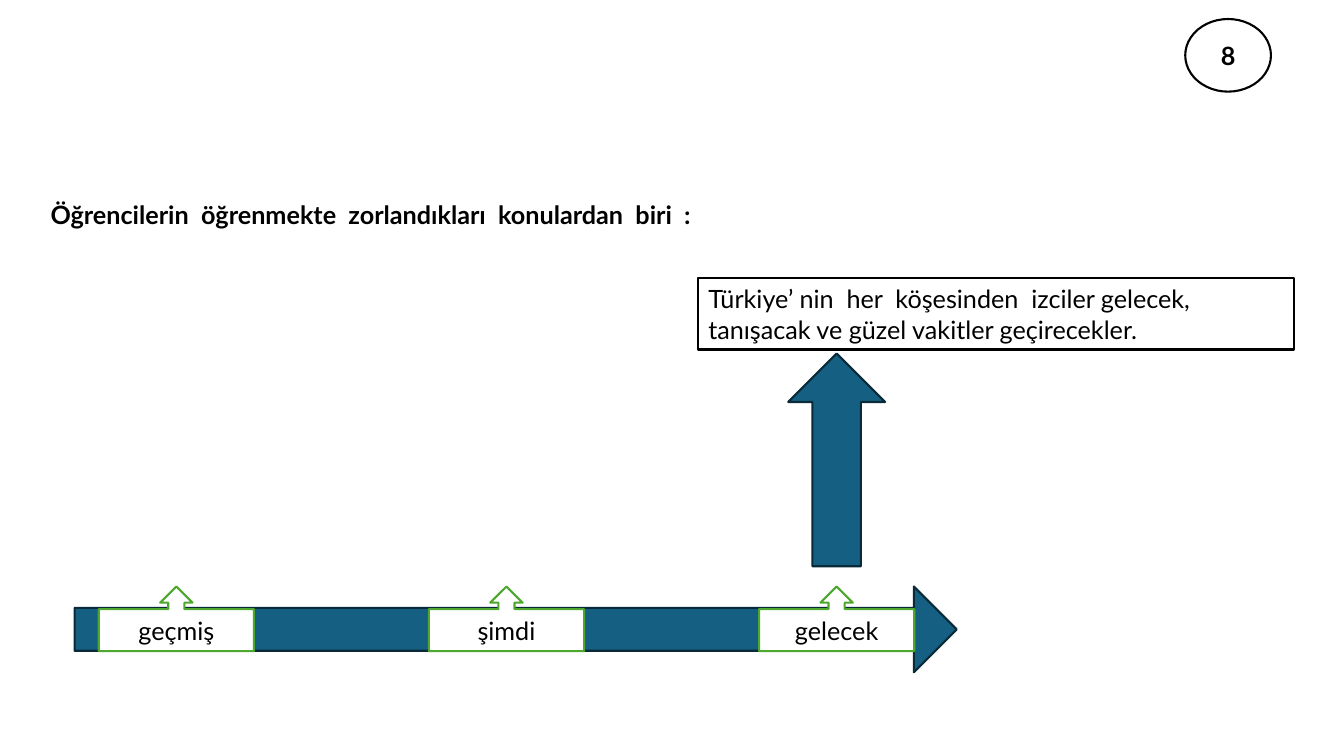
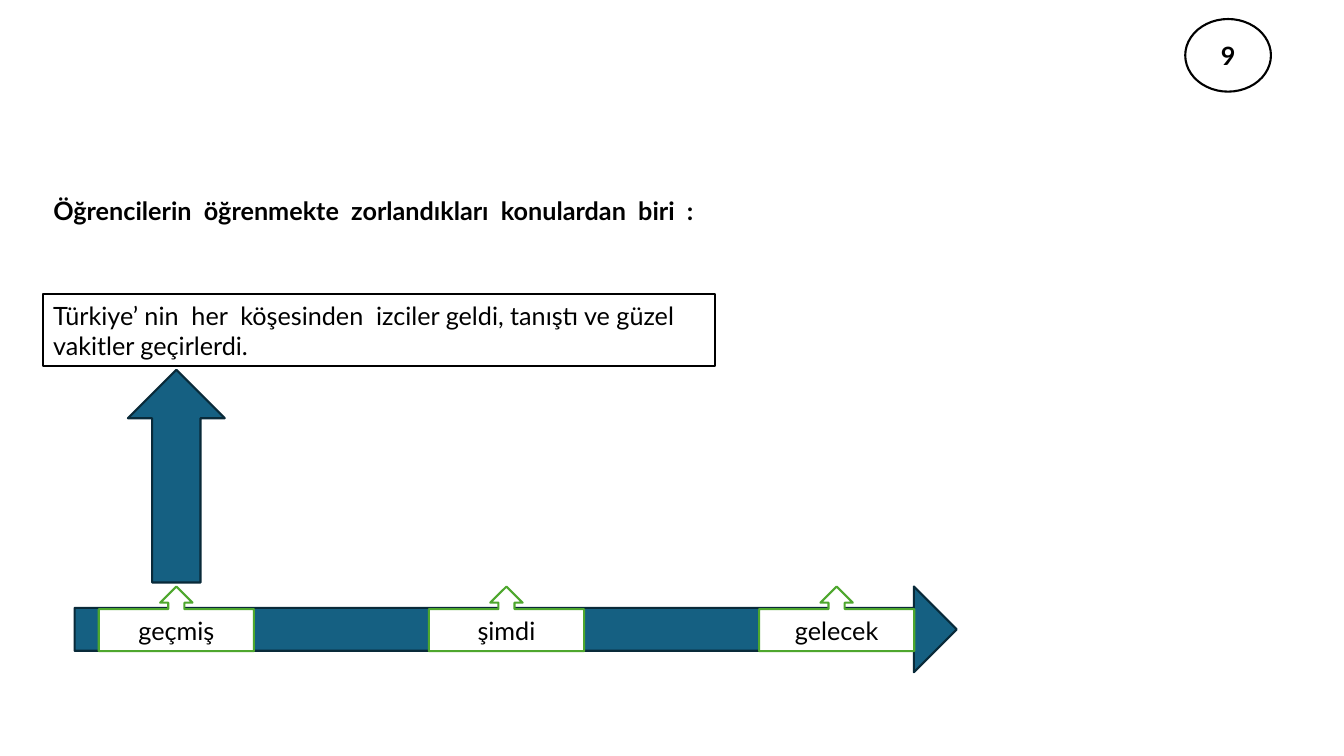
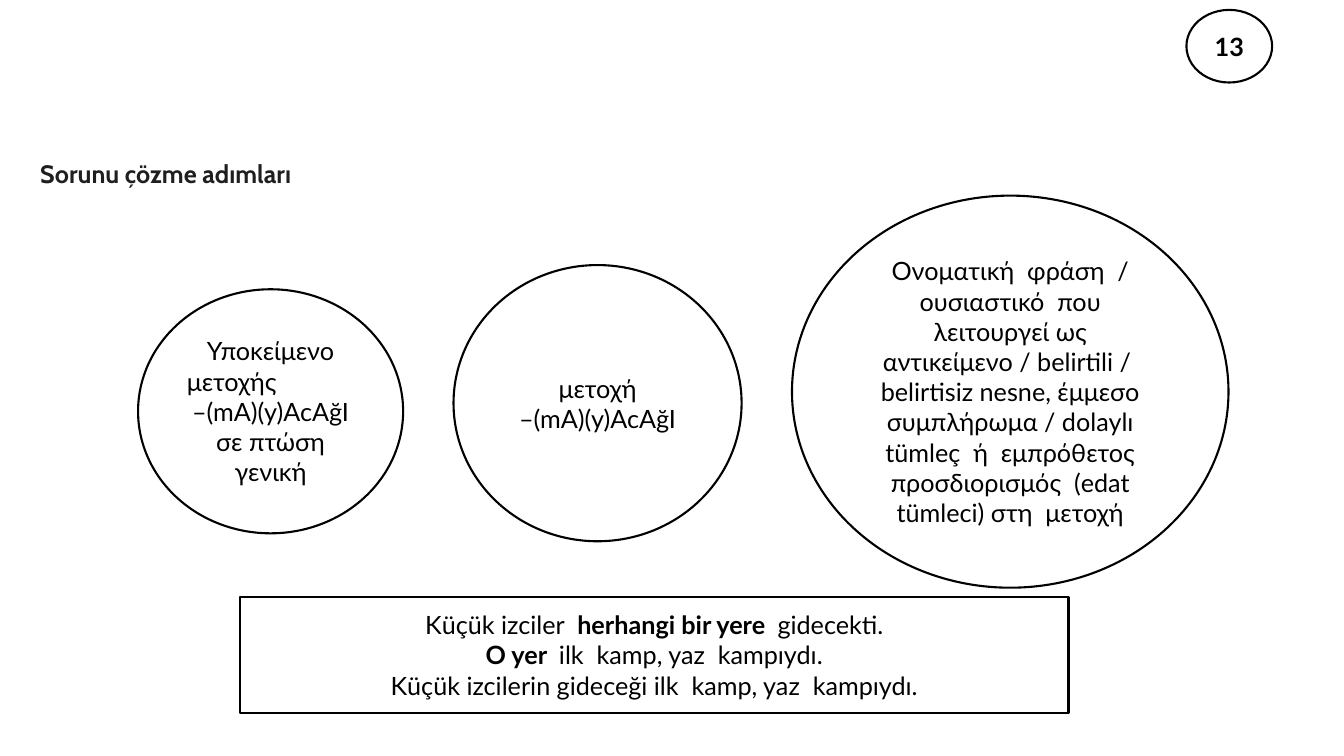
from dataclasses import dataclass

from pptx import Presentation
from pptx.dml.color import RGBColor
from pptx.enum.shapes import MSO_SHAPE
from pptx.enum.text import MSO_ANCHOR, MSO_AUTO_SIZE, PP_ALIGN
from pptx.util import Cm, Pt


@dataclass(frozen=True)
class Theme:
    ink: str = "000000"
    heading_ink: str = "1F1F1F"
    paper: str = "FFFFFF"
    arrow: str = "156082"
    arrow_edge: str = "092A39"
    callout_edge: str = "4EA72E"
    font: str = "Lato"
    heading_font: str = "Cabin"
    size: int = 18
    line: float = 1.5


THEME = Theme()
CENTER, LEFT = PP_ALIGN.CENTER, PP_ALIGN.LEFT

# Content: lengths in centimetres, boxes as left, top, width, height
TOPIC = "Öğrencilerin  öğrenmekte  zorlandıkları  konulardan  biri  :"
TENSES = ["geçmiş", "şimdi", "gelecek"]
TENSE_PAGES = [
    {
        "number": "8",
        "title_at": (1.02, 4.91),
        "sentence": "Türkiye’ nin  her  köşesinden  izciler gelecek, "
                    "tanışacak ve güzel vakitler geçirecekler.",
        "sentence_box": (17.6, 7.01, 15.01, 1.8),
        "tense": "gelecek",
    },
    {
        "number": "9",
        "title_at": (1.09, 4.8),
        "sentence": "Türkiye’ nin  her  köşesinden  izciler geldi, "
                    "tanıştı ve güzel vakitler geçirlerdi.",
        "sentence_box": (1.09, 7.42, 16.94, 1.8),
        "tense": "geçmiş",
    },
]

STEPS_TITLE = "Sorunu çözme adımları"
# Each paragraph is a list of (text, bold) spans and an alignment
STEPS = [
    ((19.96, 4.93, 11, 9.88), [
        ([("Ονοματική  φράση  / ουσιαστικό  που λειτουργεί ως αντικείμενο / "
           "belirtili /  belirtisiz nesne, έμμεσο συμπλήρωμα / dolaylı tümleç  "
           "ή  εμπρόθετος προσδιορισμός  (edat tümleci) στη  μετοχή", False)], CENTER),
    ]),
    ((11.43, 6.68, 7.26, 6.96), [
        ([("μετοχή", False)], CENTER),
        ([("–(mA)(y)AcAğI", False)], CENTER),
    ]),
    ((3.48, 7.29, 6.68, 6.15), [
        ([("Υποκείμενο", False)], CENTER),
        ([("μετοχής", False)], LEFT),
        ([("–(mA)(y)AcAğI σε πτώση γενική", False)], CENTER),
    ]),
]
EXAMPLE_BOX = (6.05, 15.04, 20.88, 2.92)
EXAMPLE = [
    ([("Κüçük izciler  ", False), ("herhangi bir yere  ", True), ("gidecekti.", False)], CENTER),
    ([("O yer  ", True), ("ilk  kamp, yaz  kampıydı.", False)], CENTER),
    ([("Κüçük izcilerin gideceği ilk  kamp, yaz  kampıydı.", False)], CENTER),
]

# Timeline measures
TIMELINE_BOX = (1.88, 14.78, 22.23, 2.16)
CALLOUT_LEFT, CALLOUT_TOP, CALLOUT_PITCH = 2.49, 14.78, 8.32
CALLOUT_WIDTH, CALLOUT_HEIGHT = 3.91, 1.63
POINTER_WIDTH, POINTER_HEIGHT, POINTER_GAP = 2.44, 5.36, 0.1


def write(frame, paragraphs, color=THEME.ink, font=THEME.font):
    """Fill a text frame with (spans, alignment) paragraphs."""
    frame.word_wrap = True
    frame.auto_size = MSO_AUTO_SIZE.NONE
    frame.vertical_anchor = MSO_ANCHOR.MIDDLE
    for index, (spans, align) in enumerate(paragraphs):
        para = frame.add_paragraph() if index else frame.paragraphs[0]
        para.alignment = align
        for text, bold in spans:
            span = para.add_run()
            span.text = text
            span.font.name = font
            span.font.size = Pt(THEME.size)
            span.font.bold = bold
            span.font.color.rgb = RGBColor.from_string(color)


def add_box(page, kind, place, paragraphs=(), fill=THEME.paper, edge=THEME.ink):
    box = page.shapes.add_shape(kind, *map(Cm, place))
    box.shadow.inherit = False
    box.fill.solid()
    box.fill.fore_color.rgb = RGBColor.from_string(fill)
    box.line.color.rgb = RGBColor.from_string(edge)
    box.line.width = Pt(THEME.line)
    if paragraphs:
        write(box.text_frame, paragraphs)


def add_page(deck, title, title_at, **style):
    page = deck.slides.add_slide(deck.slide_layouts[5])
    heading = page.shapes.title
    heading.left, heading.top = map(Cm, title_at)
    heading.width, heading.height = Cm(26), Cm(1)
    write(heading.text_frame, [([(title, True)], LEFT)], **style)
    return page


def add_badge(page, number, left=29.87, top=0.48):
    add_box(page, MSO_SHAPE.OVAL, (left, top, 2.16, 1.83), [([(number, True)], CENTER)])


def add_block_arrow(page, kind, place):
    add_box(page, kind, place, fill=THEME.arrow, edge=THEME.arrow_edge)


def add_tense_page(deck, content):
    page = add_page(deck, TOPIC, content["title_at"])
    sentence_box = content["sentence_box"]
    add_box(page, MSO_SHAPE.RECTANGLE, sentence_box, [([(content["sentence"], False)], LEFT)])

    # Timeline with one callout per tense
    add_block_arrow(page, MSO_SHAPE.RIGHT_ARROW, TIMELINE_BOX)
    for index, tense in enumerate(TENSES):
        left = CALLOUT_LEFT + index * CALLOUT_PITCH
        add_box(page, MSO_SHAPE.UP_ARROW_CALLOUT,
                (left, CALLOUT_TOP, CALLOUT_WIDTH, CALLOUT_HEIGHT),
                [([(tense, False)], CENTER)], edge=THEME.callout_edge)

    # Pointer centred over the tense, just below the sentence
    tense_left = CALLOUT_LEFT + TENSES.index(content["tense"]) * CALLOUT_PITCH
    pointer_left = tense_left + (CALLOUT_WIDTH - POINTER_WIDTH) / 2
    pointer_top = sentence_box[1] + sentence_box[3] + POINTER_GAP
    add_block_arrow(page, MSO_SHAPE.UP_ARROW,
                    (pointer_left, pointer_top, POINTER_WIDTH, POINTER_HEIGHT))
    add_badge(page, content["number"])


def add_steps_page(deck):
    page = add_page(deck, STEPS_TITLE, (0.76, 3.87),
                    color=THEME.heading_ink, font=THEME.heading_font)
    for place, paragraphs in STEPS:
        add_box(page, MSO_SHAPE.OVAL, place, paragraphs)
    add_badge(page, "13", left=29.9, top=0.25)
    add_box(page, MSO_SHAPE.RECTANGLE, EXAMPLE_BOX, EXAMPLE)


def main():
    deck = Presentation()
    deck.slide_width, deck.slide_height = Cm(33.87), Cm(19.05)
    for content in TENSE_PAGES:
        add_tense_page(deck, content)
    add_steps_page(deck)
    deck.save("out.pptx")


if __name__ == "__main__":
    main()
